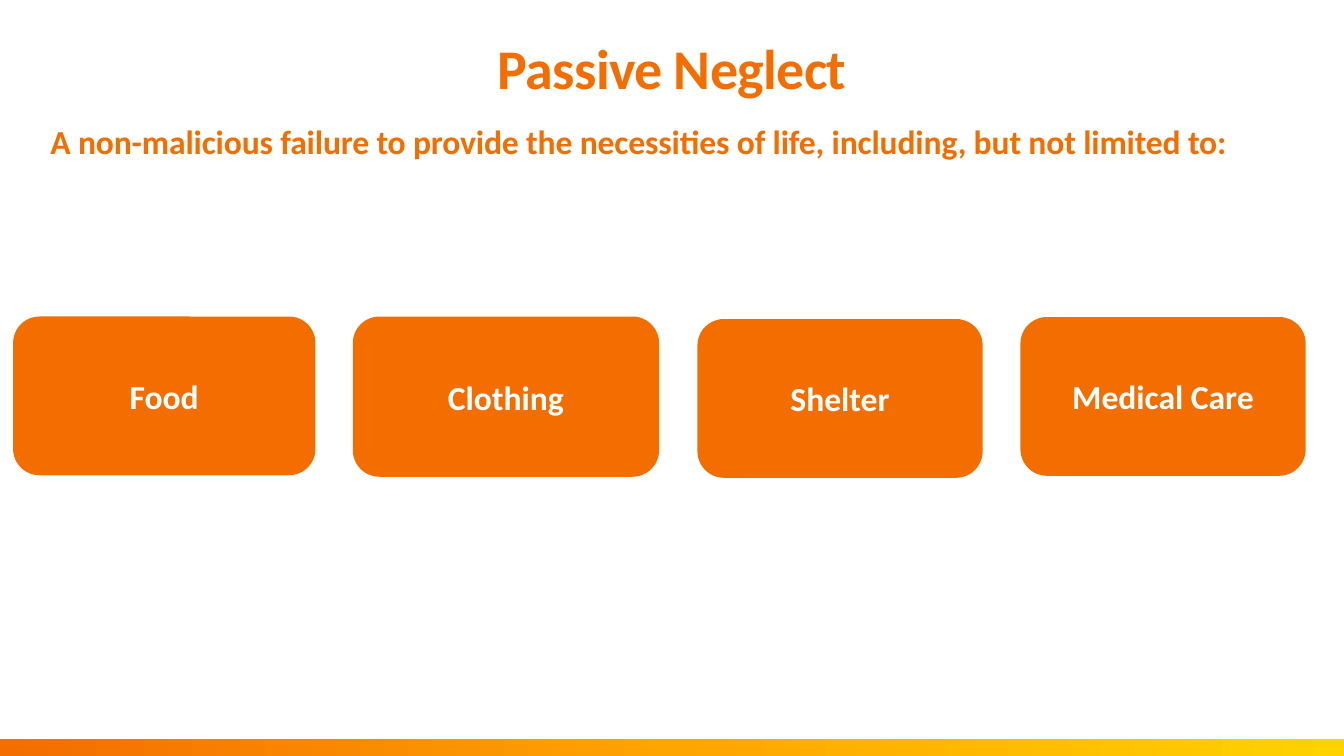
from copy import deepcopy

from lxml import etree
from pptx import Presentation
from pptx import util as u
from pptx.dml.color import RGBColor
from pptx.enum import shapes, text
from pptx.oxml import ns

COLORS = {"orange": "F36D00", "amber": "FFA500", "yellow": "FFD200", "white": "FFFFFF"}


def set_font(para, size, color):
    para.font.name = "Calibri"
    para.font.size = u.Pt(size)
    para.font.bold = True
    para.font.color.rgb = RGBColor.from_string(COLORS[color])


def fill_placeholder(box, wording, top, height, size, tracking):
    """Place a placeholder and give it one line of orange text."""
    box.left, box.top = u.Inches(1), u.Inches(top)
    box.width, box.height = u.Inches(24.67), u.Inches(height)
    frame = box.text_frame
    frame.text = wording
    frame.word_wrap = True
    frame.auto_size = text.MSO_AUTO_SIZE.NONE
    frame.margin_left = frame.margin_right = frame.margin_top = frame.margin_bottom = 0
    para = frame.paragraphs[0]
    para.line_spacing = u.Pt(size)
    para.space_before = u.Pt(0)
    para.runs[0]._r.get_or_add_rPr().set("spc", str(tracking))
    return frame, para


deck = Presentation()
deck.slide_width, deck.slide_height = u.Inches(26.67), u.Inches(15)
page = deck.slides.add_slide(deck.slide_layouts[1])

# Gradient band along the bottom edge
band = page.shapes.add_shape(shapes.MSO_SHAPE.RECTANGLE, 0, u.Inches(14.67),
                             u.Inches(26.67), u.Inches(0.36))
band.shadow.inherit = False
band.line.fill.background()
band.fill.gradient()
band.fill.gradient_angle = 0
stop_list = band._element.spPr.find(".//" + ns.qn("a:gsLst"))
stop_list.insert(1, deepcopy(stop_list[0]))
for stop, position, color in zip(band.fill.gradient_stops, (0, 0.5, 1),
                                 ("orange", "amber", "yellow")):
    stop.position = position
    stop.color.rgb = RGBColor.from_string(COLORS[color])

# Title
frame, para = fill_placeholder(page.shapes.title, "Passive Neglect", 0.38, 2.12, 80, -100)
frame.vertical_anchor = text.MSO_ANCHOR.MIDDLE
para.alignment = text.PP_ALIGN.CENTER
set_font(para, 80, "orange")

# Definition, without a bullet
frame, para = fill_placeholder(
    page.placeholders[1],
    "A non-malicious failure to provide the necessities of life, including, "
    "but not limited to:", 2.53, 9.9, 48, -20)
frame.vertical_anchor = text.MSO_ANCHOR.TOP
para.alignment = text.PP_ALIGN.LEFT
para.space_after = u.Pt(15.8)
properties = para._p.get_or_add_pPr()
properties.set("marL", "0")
properties.set("indent", "0")
etree.SubElement(properties, ns.qn("a:buNone"))
set_font(para, 48, "orange")

# Necessities of life: label, left, top, width, height
necessities = [
    ("Food", 0.26, 6.28, 6, 3.15),
    ("Clothing", 7, 6.28, 6.08, 3.18),
    ("Shelter", 13.84, 6.33, 5.66, 3.15),
    ("Medical Care", 20.25, 6.29, 5.66, 3.15),
]
for label, *place in necessities:
    card = page.shapes.add_shape(shapes.MSO_SHAPE.ROUNDED_RECTANGLE,
                                 *(u.Inches(length) for length in place))
    card.shadow.inherit = False
    card.fill.solid()
    card.fill.fore_color.rgb = RGBColor.from_string(COLORS["orange"])
    card.line.fill.background()
    card.text_frame.text = label
    card.text_frame.vertical_anchor = text.MSO_ANCHOR.MIDDLE
    para = card.text_frame.paragraphs[0]
    para.alignment = text.PP_ALIGN.CENTER
    set_font(para, 48, "white")

deck.save("out.pptx")
